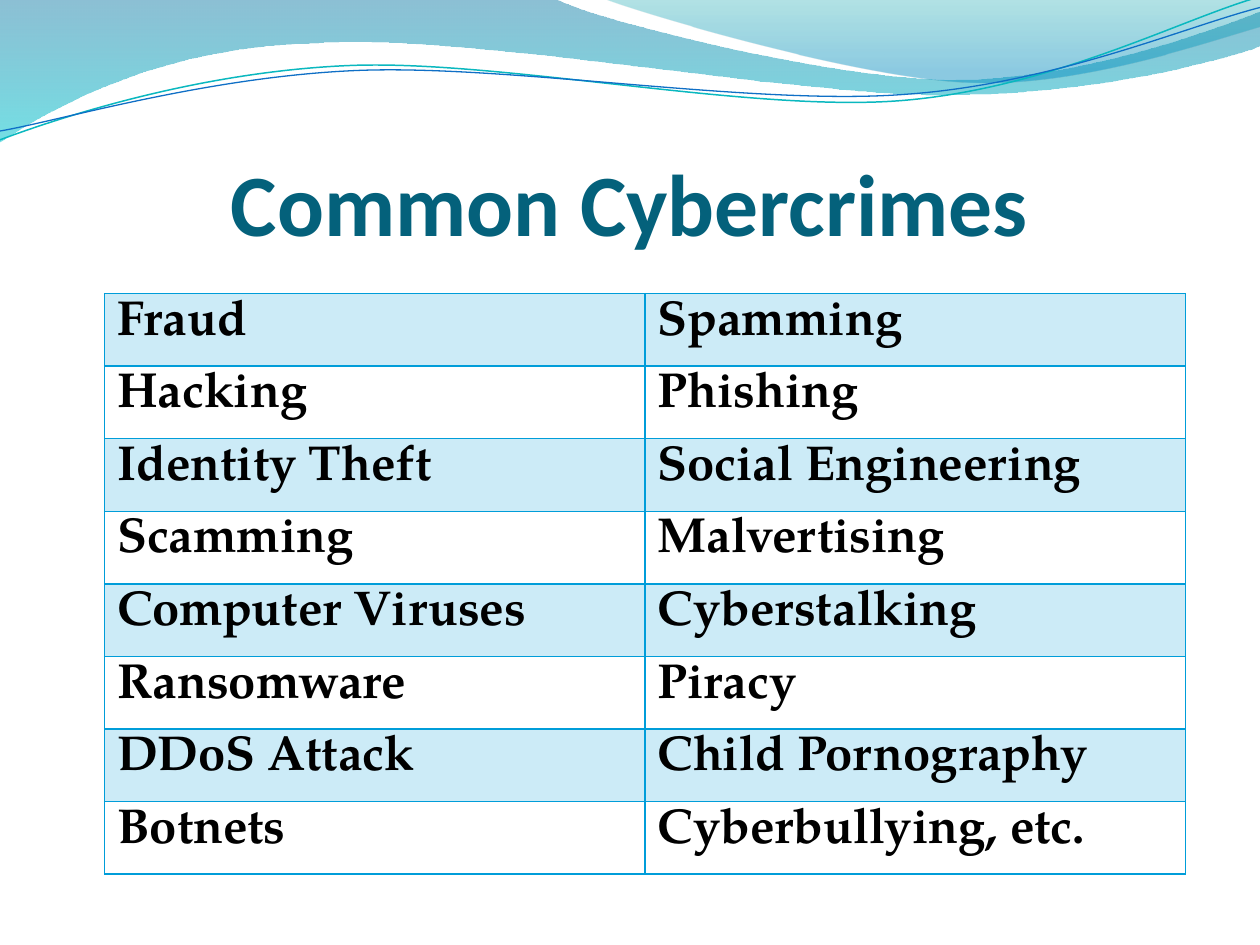
from dataclasses import dataclass
from math import cos, radians, sin

from lxml.etree import SubElement
from pptx import Presentation
from pptx.dml.color import RGBColor
from pptx.enum.text import MSO_ANCHOR, PP_ALIGN
from pptx.oxml import parse_xml
from pptx.oxml.ns import nsdecls, qn
from pptx.util import Inches, Pt

TITLE_TEAL = RGBColor(0x04, 0x61, 0x7B)
TABLE_BLUE = RGBColor(0x00, 0x9D, 0xD9)
BLACK = RGBColor(0x00, 0x00, 0x00)
DEEP_BLUE = RGBColor(0x00, 0x74, 0xA1)
AQUA = RGBColor(0x00, 0xC6, 0xCF)
SEA_GREEN = RGBColor(0x00, 0xA1, 0xA9)
SKY_BLUE = RGBColor(0x00, 0x8B, 0xBF)
LINE_TEAL = RGBColor(0x0A, 0xB8, 0xBF)
LINE_BLUE = RGBColor(0x0F, 0x6F, 0xC6)
RIPPLE_TILT = -2.7


@dataclass
class GradientStop:
    position: int
    color: RGBColor
    opacity: int


@dataclass
class Wave:
    start: tuple
    segments: list
    stops: list


@dataclass
class Ripple:
    start: tuple
    segments: list
    center: tuple
    color: RGBColor
    width: float


WAVES = [
    Wave((0, 0), [
        (4.4, -0.01),
        (4.76, 0.17, 6.64, 0.63, 7.58, 0.63),
        (8.53, 0.63, 9.58, 0.26, 10, 0.09),
        (10.01, 0.36),
        (9.83, 0.44, 8.7, 0.76, 7.46, 0.75),
        (6.22, 0.75, 3.82, 0.28, 2.57, 0.34),
        (1.29, 0.36, 0.46, 0.83, -0.01, 1.13),
        (0, 0),
    ], [GradientStop(0, DEEP_BLUE, 45), GradientStop(100, AQUA, 55)]),
    Wave((4.79, -0.01), [
        (5.09, 0.11, 6.82, 0.62, 7.69, 0.65),
        (8.56, 0.69, 9.61, 0.32, 10, 0.21),
        (10, 0),
        (4.79, -0.01),
    ], [GradientStop(0, SEA_GREEN, 30), GradientStop(80, SKY_BLUE, 45)]),
]
RIPPLES = [
    Ripple((0, 1.11), [
        (0.48, 0.93, 1.58, 0.57, 2.77, 0.52),
        (3.95, 0.47, 5.93, 0.89, 7.13, 0.8),
        (8.33, 0.71, 9.38, 0.15, 9.98, -0.02),
    ], (4.99, 0.57), LINE_TEAL, 0.85),
    Ripple((0, 1.04), [
        (0.47, 0.96, 1.64, 0.61, 2.83, 0.56),
        (4.03, 0.51, 5.97, 0.84, 7.17, 0.75),
        (8.36, 0.67, 9.41, 0.21, 10, 0.06),
    ], (5, 0.59), LINE_BLUE, 0.75),
]
CRIMES = [
    ("Fraud", "Spamming"),
    ("Hacking", "Phishing"),
    ("Identity Theft", "Social Engineering"),
    ("Scamming", "Malvertising"),
    ("Computer Viruses", "Cyberstalking"),
    ("Ransomware", "Piracy"),
    ("DDoS Attack", "Child Pornography"),
    ("Botnets", "Cyberbullying, etc."),
]


def pair_up(segment: tuple) -> list:
    return list(zip(segment[::2], segment[1::2]))


def turn(point: tuple, center: tuple, degrees: float) -> tuple:
    angle = radians(degrees)
    x, y = point[0] - center[0], point[1] - center[1]
    return (center[0] + x * cos(angle) - y * sin(angle),
            center[1] + x * sin(angle) + y * cos(angle))


def draw_outline(slide, start: tuple, segments: list, close: bool,
                 center: tuple = (0, 0), tilt: float = 0):
    points = [start] + [point for segment in segments for point in pair_up(segment)]
    first, *rest = [tuple(Inches(value) for value in turn(point, center, -tilt))
                    for point in points]
    builder = slide.shapes.build_freeform(*first)
    builder.add_line_segments(rest, close=close)
    shape = builder.convert_to_shape()
    shape.shadow.inherit = False
    shape.rotation = tilt % 360
    strokes = iter(list(shape.element.iter(qn("a:lnTo"))))
    for segment in segments:
        group = [next(strokes) for _ in pair_up(segment)]
        if len(group) == 3:
            curve = parse_xml(f'<a:cubicBezTo {nsdecls("a")}/>')
            group[0].addprevious(curve)
            for stroke in group:
                curve.append(stroke[0])
                stroke.getparent().remove(stroke)
    return shape


def draw_wave(slide, wave: Wave) -> None:
    shape = draw_outline(slide, wave.start, wave.segments, True)
    shape.line.fill.background()
    stops = "".join(
        f'<a:gs pos="{stop.position * 1000}"><a:srgbClr val="{stop.color}">'
        f'<a:alpha val="{stop.opacity * 1000}"/></a:srgbClr></a:gs>'
        for stop in wave.stops)
    gradient = parse_xml(
        f'<a:gradFill {nsdecls("a")}><a:gsLst>{stops}</a:gsLst>'
        '<a:lin ang="5400000" scaled="0"/></a:gradFill>')
    shape.element.spPr.find(qn("a:custGeom")).addnext(gradient)


def draw_ripple(slide, ripple: Ripple) -> None:
    shape = draw_outline(slide, ripple.start, ripple.segments, False,
                         ripple.center, RIPPLE_TILT)
    shape.fill.background()
    shape.line.color.rgb = ripple.color
    shape.line.width = Pt(ripple.width)


def write_title(slide, text: str) -> None:
    title = slide.shapes.title
    title.element.getparent().append(title.element)
    title.left, title.top = Inches(0.5), Inches(0.77)
    title.width, title.height = Inches(9), Inches(1.25)
    frame = title.text_frame
    frame.text = text
    frame.vertical_anchor = MSO_ANCHOR.BOTTOM
    frame.margin_left = frame.margin_right = frame.margin_bottom = 0
    frame.margin_top = Inches(0.05)
    para = frame.paragraphs[0]
    para.alignment = PP_ALIGN.CENTER
    para.font.name = "Calibri"
    para.font.size = Pt(50)
    para.font.bold = True
    para.font.color.rgb = TITLE_TEAL


def style_cell(cell, text: str, shaded: bool) -> None:
    cell.text = text
    font = cell.text_frame.paragraphs[0].font
    font.name = "TeX Gyre Pagella"
    font.size = Pt(28)
    font.bold = True
    font.color.rgb = BLACK
    properties = cell._tc.get_or_add_tcPr()
    if shaded:
        cell.fill.solid()
        cell.fill.fore_color.rgb = TABLE_BLUE
        color = properties.find(f".//{qn('a:srgbClr')}")
        SubElement(color, qn("a:alpha"), val="20000")
    else:
        cell.fill.background()
    for index, side in enumerate(("lnL", "lnR", "lnT", "lnB")):
        properties.insert(index, parse_xml(
            f'<a:{side} {nsdecls("a")} w="{Pt(1)}"><a:solidFill>'
            f'<a:srgbClr val="{TABLE_BLUE}"/></a:solidFill></a:{side}>'))


def draw_table(slide, rows: list) -> None:
    frame = slide.shapes.add_table(len(rows), 2, Inches(0.83), Inches(2.33),
                                   Inches(8.58), Inches(4.61))
    table = frame.table
    table.first_row = table.horz_banding = False
    for row_index, row in enumerate(rows):
        for column_index, text in enumerate(row):
            style_cell(table.cell(row_index, column_index), text, row_index % 2 == 0)


def main() -> None:
    deck = Presentation()
    deck.slide_width, deck.slide_height = Inches(10), Inches(7.5)
    slide = deck.slides.add_slide(deck.slide_layouts[5])
    for wave in WAVES:
        draw_wave(slide, wave)
    for ripple in RIPPLES:
        draw_ripple(slide, ripple)
    write_title(slide, "Common Cybercrimes")
    draw_table(slide, CRIMES)
    deck.save("out.pptx")


if __name__ == "__main__":
    main()
